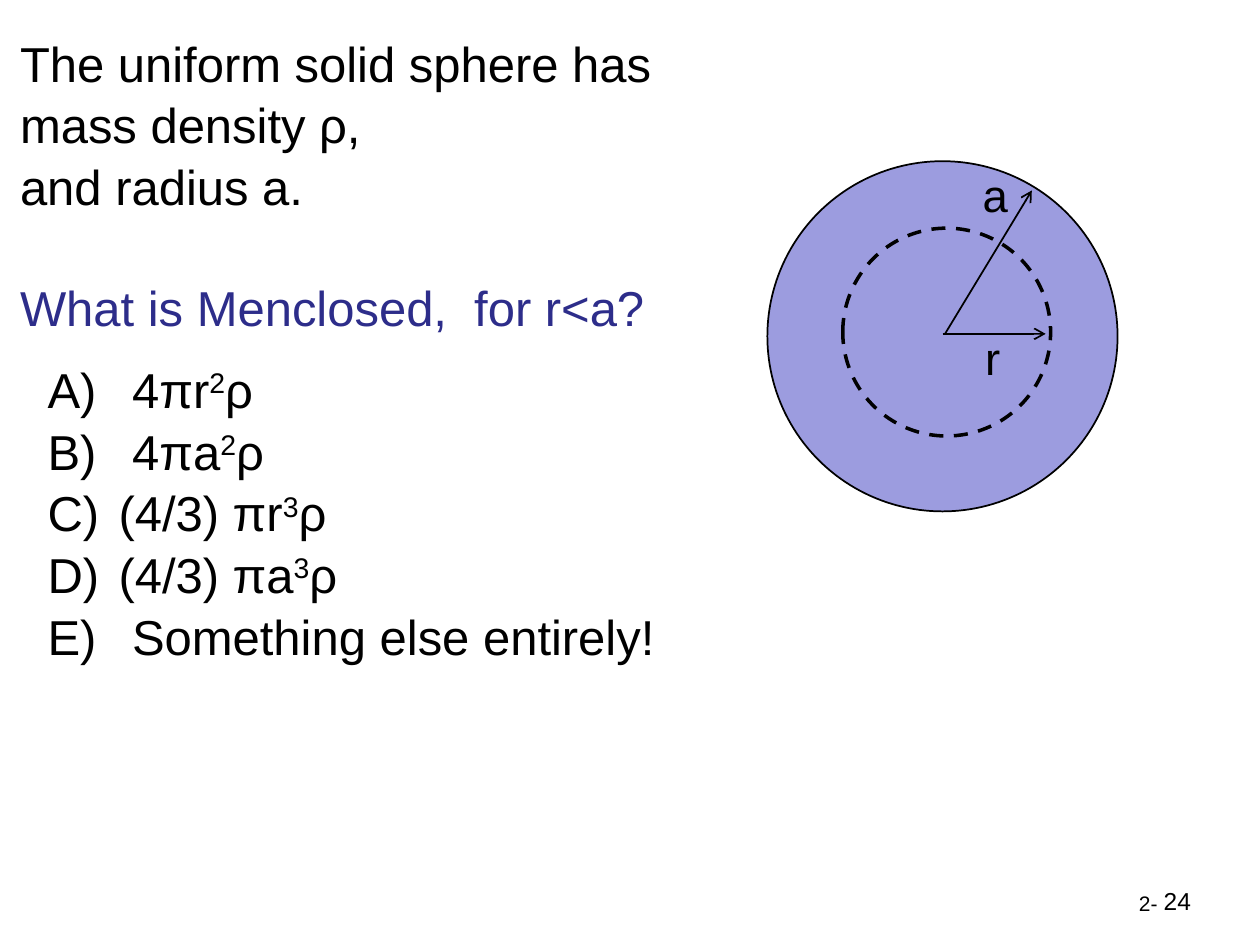
"""Build the slide asking for the mass enclosed within a uniform solid sphere."""
from lxml.etree import SubElement
from pptx import Presentation
from pptx.dml.color import RGBColor
from pptx.enum.dml import MSO_LINE
from pptx.enum.shapes import MSO_CONNECTOR, MSO_SHAPE
from pptx.enum.text import MSO_ANCHOR, MSO_AUTO_SIZE, PP_ALIGN
from pptx.oxml.ns import qn
from pptx.util import Cm, Pt

BLACK = RGBColor(0x00, 0x00, 0x00)
NAVY = RGBColor(0x2D, 0x2D, 0x8A)
LAVENDER = RGBColor(0x9C, 0x9C, 0xDF)
LINE_SPACING = 1.05


def format_runs(paragraph, size, color=BLACK):
    for run in paragraph.runs:
        run.font.name = "Arial"
        run.font.size = Pt(size)
        run.font.color.rgb = color


def add_label(text, left, top, width, height, size, align=PP_ALIGN.LEFT):
    label = slide.shapes.add_textbox(Cm(left), Cm(top), Cm(width), Cm(height))
    label.text_frame.text = text
    label.text_frame.paragraphs[0].alignment = align
    format_runs(label.text_frame.paragraphs[0], size)


prs = Presentation()
prs.slide_width, prs.slide_height = Cm(25.4), Cm(19.05)
slide = prs.slides.add_slide(prs.slide_layouts[5])

question = slide.shapes.title
question.left, question.top = Cm(0.15), Cm(0.48)
question.width, question.height = Cm(22.68), Cm(6.25)
question_frame = question.text_frame
question_frame.text = (
    "The uniform solid sphere has\vmass density ρ,\n"
    "and radius a.\n"
    "What is Menclosed,  for r<a?"
)
question_frame.word_wrap = True
question_frame.auto_size = MSO_AUTO_SIZE.NONE
question_frame.vertical_anchor = MSO_ANCHOR.TOP
for paragraph, color in zip(question_frame.paragraphs, (BLACK, BLACK, NAVY)):
    paragraph.alignment = PP_ALIGN.LEFT
    paragraph.line_spacing = LINE_SPACING
    format_runs(paragraph, 28, color)
question_frame.paragraphs[-1].space_before = Pt(34)

sphere = slide.shapes.add_shape(MSO_SHAPE.OVAL, Cm(15.47), Cm(3.25), Cm(7.06), Cm(7.06))
sphere.fill.solid()
sphere.fill.fore_color.rgb = LAVENDER
sphere.line.width = Pt(1)
inner_surface = slide.shapes.add_shape(MSO_SHAPE.OVAL, Cm(16.99), Cm(4.6), Cm(4.19), Cm(4.19))
inner_surface.fill.background()
inner_surface.line.width = Pt(2)
inner_surface.line.dash_style = MSO_LINE.DASH
for circle in (sphere, inner_surface):
    circle.shadow.inherit = False
    circle.line.color.rgb = BLACK

for start_x, end_x, end_y in ((19, 21.08, 6.73), (19.05, 20.8, 3.84)):
    radius = slide.shapes.add_connector(
        MSO_CONNECTOR.STRAIGHT, Cm(start_x), Cm(6.73), Cm(end_x), Cm(end_y)
    )
    radius.line.color.rgb = BLACK
    radius.line.width = Pt(1)
    SubElement(radius.line._get_or_add_ln(), qn("a:tailEnd"), type="arrow")
    SubElement(radius._element.spPr, qn("a:effectLst"))

answers = slide.shapes.add_textbox(Cm(0.71), Cm(7.06), Cm(23.34), Cm(7.44))
answers_frame = answers.text_frame
answers_frame.word_wrap = True
choices = (
    (" 4πr", "2", "ρ"),
    (" 4πa", "2", "ρ"),
    ("(4/3) πr", "3", "ρ"),
    ("(4/3) πa", "3", "ρ"),
    (" Something else entirely!",),
)
answers_frame.text = "\n" * (len(choices) - 1)
for paragraph, parts in zip(answers_frame.paragraphs, choices):
    paragraph.line_spacing = LINE_SPACING
    for part in parts:
        paragraph.add_run().text = part
    format_runs(paragraph, 28)
    if len(parts) > 1:
        paragraph.runs[1].font._element.set("baseline", "30000")
    properties = paragraph._p.get_or_add_pPr()
    properties.set("marL", str(Cm(1.43)))
    properties.set("indent", str(-Cm(1.43)))
    SubElement(properties, qn("a:buFont"), typeface="Arial")
    SubElement(properties, qn("a:buAutoNum"), type="alphaUcParenR")

add_label("r", 19.61, 6.53, 0.84, 1.37, 26)
add_label("a", 19.56, 3.25, 1.02, 1.37, 26)
add_label("2-", 22.71, 17.83, 1.22, 0.76, 12)
add_label("24", 18.34, 17.73, 5.92, 1.32, 14, PP_ALIGN.RIGHT)

prs.save("out.pptx")
